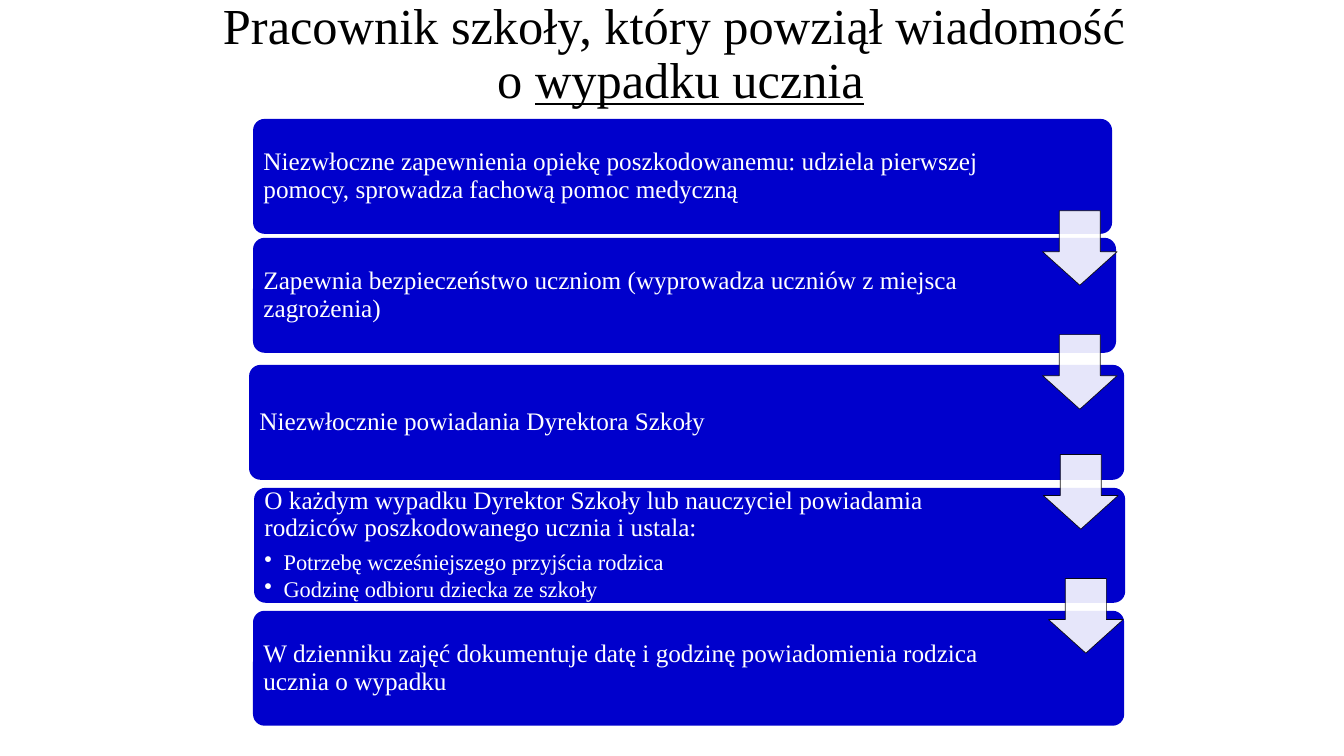
from lxml.etree import SubElement
from pptx import Presentation
from pptx.dml.color import RGBColor
from pptx.enum.shapes import MSO_SHAPE as Shape
from pptx.enum.text import MSO_ANCHOR as Anchor, PP_ALIGN as Align
from pptx.oxml.ns import qn
from pptx.util import Inches, Pt

FONT = "Times New Roman"
CARD_HEIGHT = 1.14
ARROW_SIZE = 0.74
INSET = 0.07


def paint(color_format, color, opacity=100):
    color_format.rgb = RGBColor.from_string(color)
    if opacity < 100:
        node = color_format._xFill.find(qn("a:srgbClr"))
        SubElement(node, qn("a:alpha"), val=str(opacity * 1000))


def style(para, size, color):
    para.line_spacing = 0.9
    for span in para.runs:
        span.font.name = FONT
        span.font.size = Pt(size)
        paint(span.font.fill.fore_color, color)


deck = Presentation()
deck.slide_width, deck.slide_height = Inches(13.33), Inches(7.5)
page = deck.slides.add_slide(deck.slide_layouts[5])

title = page.shapes.title
title.left, title.top = Inches(1.5), Inches(-0.24)
title.width, title.height = Inches(10.5), Inches(1.57)
title.text_frame.vertical_anchor = Anchor.MIDDLE
heading = title.text_frame.paragraphs[0]
heading.text = "Pracownik szkoły, który powziął wiadomość \vo "
heading.alignment = Align.CENTER
accident = heading.add_run()
accident.text = "wypadku ucznia"
accident.font.underline = True
for span in heading.runs:
    span.font.fill.solid()
style(heading, 36, "000000")

steps = [
    (2.51, 1.18, 8.52, 7.28, ["Niezwłoczne zapewnienia opiekę poszkodowanemu: udziela pierwszej pomocy, sprowadza fachową pomoc medyczną"]),
    (2.51, 2.36, 8.56, 7.18, ["Zapewnia bezpieczeństwo uczniom (wyprowadza uczniów z miejsca zagrożenia)"]),
    (2.47, 3.62, 8.68, 7.28, ["Niezwłocznie powiadania Dyrektora Szkoły"]),
    (2.52, 4.84, 8.64, 7.25, [
        "O każdym wypadku Dyrektor Szkoły lub nauczyciel powiadamia rodziców poszkodowanego ucznia i ustala:",
        "Potrzebę wcześniejszego przyjścia rodzica",
        "Godzinę odbioru dziecka ze szkoły",
    ]),
    (2.51, 6.06, 8.64, 7.25, ["W dzienniku zajęć dokumentuje datę i godzinę powiadomienia rodzica ucznia o wypadku"]),
]
for left, top, width, text_width, lines in steps:
    card = page.shapes.add_shape(
        Shape.ROUNDED_RECTANGLE, Inches(left), Inches(top), Inches(width), Inches(CARD_HEIGHT))
    card.adjustments[0] = 0.1
    card.shadow.inherit = False
    card.fill.solid()
    paint(card.fill.fore_color, "0000CC")
    card.line.fill.background()
    frame = card.text_frame
    frame.word_wrap = True
    frame.vertical_anchor = Anchor.MIDDLE
    frame.margin_left = frame.margin_top = frame.margin_bottom = Inches(INSET)
    frame.margin_right = Inches(width - text_width)
    frame.text = "\n".join(lines)
    for index, para in enumerate(frame.paragraphs):
        para.alignment = Align.LEFT
        para.space_after = Pt(2.4 if index else 6.3)
        if index:
            para.level = 1
            properties = para._p.get_or_add_pPr()
            properties.set("marL", str(Inches(0.19)))
            properties.set("indent", str(-Inches(0.19)))
            SubElement(properties, qn("a:buChar"), char="•")
        for span in para.runs:
            span.font.fill.solid()
        style(para, 16 if index else 18, "FFFFFF")

for left, top in [(10.34, 2.09), (10.34, 3.32), (10.35, 4.51), (10.4, 5.74)]:
    arrow = page.shapes.add_shape(
        Shape.DOWN_ARROW, Inches(left), Inches(top), Inches(ARROW_SIZE), Inches(ARROW_SIZE))
    arrow.adjustments[0] = 0.45
    arrow.adjustments[1] = 0.45
    arrow.adjustments[0] = 0.55
    arrow.shadow.inherit = False
    arrow.fill.solid()
    paint(arrow.fill.fore_color, "FFFFFF", 90)
    arrow.line.fill.solid()
    paint(arrow.line.fill.fore_color, "000000", 90)
    arrow.line.width = Pt(0.5)

deck.save("out.pptx")
